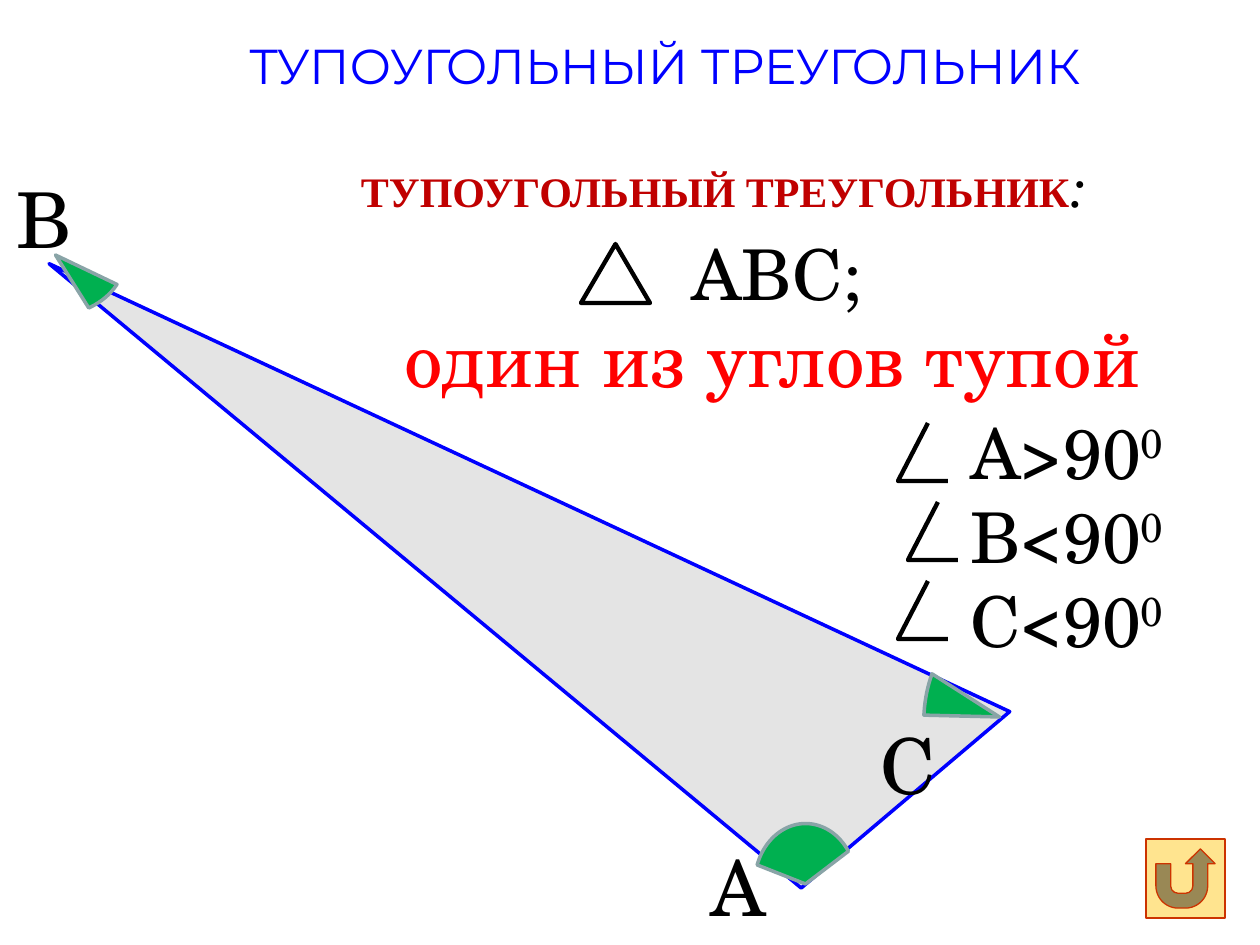
from lxml import etree
from pptx import Presentation
from pptx.dml.color import RGBColor
from pptx.enum import shapes
from pptx.oxml import ns
from pptx import util as u

PX = 914400 / 126
SERIF, TIMES, SANS = "TeX Gyre Schola", "Times New Roman", "Montserrat"
BLACK, BLUE, RED, GREEN = "000000", "0000FF", "FF0000", "00B050"


def px(n):
    return u.Emu(round(n * PX))


def color(value):
    return RGBColor.from_string(value)


class Board:
    """Draws on one slide with a shared style."""

    def __init__(self, slide):
        self.s = slide

    def paint(self, sp, fill, line, width, alpha=None):
        sp.shadow.inherit = False
        if fill:
            sp.fill.solid()
            sp.fill.fore_color.rgb = color(fill)
        else:
            sp.fill.background()
        if alpha:
            clr = sp.fill._xPr.find(".//" + ns.qn("a:srgbClr"))
            etree.SubElement(clr, ns.qn("a:alpha"), val=str(alpha * 1000))
        sp.line.color.rgb = color(line)
        sp.line.width = u.Pt(width)

    def shape(self, kind, box, fill, line, width, rot=0, adj=(), alpha=None):
        sp = self.s.shapes.add_shape(kind, *map(px, box))
        sp.rotation = rot
        for i, value in enumerate(adj):
            sp.adjustments[i] = value
        self.paint(sp, fill, line, width, alpha)

    def sector(self, box, rot, start, end):
        # Adjustments count in 100000ths, angles in 60000ths of a degree
        self.shape(shapes.MSO_SHAPE.PIE, box, GREEN, "89A4A7", 2, rot,
                   (start * 0.6, end * 0.6))

    def angle_sign(self, x, y):
        fb = self.s.shapes.build_freeform(x + 30, y, scale=PX)
        fb.add_line_segments([(x, y + 58), (x + 50, y + 58)], close=False)
        self.paint(fb.convert_to_shape(), None, BLACK, 2.5)

    def text(self, box, paragraphs, size, fill=BLACK, font=SERIF):
        """A run is its text and a dict of what differs from the box style."""
        tf = self.s.shapes.add_textbox(*map(px, box)).text_frame
        tf.word_wrap = True
        for i, runs in enumerate(paragraphs):
            p = tf.add_paragraph() if i else tf.paragraphs[0]
            for words, diff in runs:
                r = p.add_run()
                r.text = words
                f = r.font
                f.size = u.Pt(diff.get("size", size))
                f.name = diff.get("font", font)
                f.color.rgb = color(diff.get("fill", fill))
                f.bold = diff.get("bold", False)
                f.italic = diff.get("italic", False)
                if "base" in diff:
                    r._r.get_or_add_rPr().set("baseline", str(diff["base"] * 1000))


def main():
    prs = Presentation()
    prs.slide_width, prs.slide_height = px(1260), px(945)
    b = Board(prs.slides.add_slide(prs.slide_layouts[6]))
    triangle = shapes.MSO_SHAPE.ISOSCELES_TRIANGLE

    # Obtuse triangle and its vertices
    b.shape(triangle, (-53, 476, 1060, 248), "BFBFBF", BLUE, 2, 205, (0.108,), 42)
    for letter, x, y in (("А", 698, 833), ("В", 4, 165), ("С", 868, 711)):
        b.text((x, y, 137, 106), [[(letter, {})]], 44)

    # Angle sectors at A, B and C
    b.sector((745, 833, 121, 102), 90, 111.5, 232.6)
    b.sector((-15, 195, 141, 120), 180, 205.6, 237.9)
    b.sector((924, 612, 151, 210), 4, 177.4, 208.6)

    # Definition
    b.text((333, 145, 983, 81), [[
        (" ", {"italic": True}),
        ("ТУПОУГОЛЬНЫЙ ТРЕУГОЛЬНИК",
         {"size": 24, "font": TIMES, "fill": "C00000", "bold": True}),
        (":", {"italic": True})]], 32)
    b.shape(triangle, (581, 244, 69, 59), None, BLACK, 2.5)
    b.text((679, 224, 237, 97), [[("АВС;", {})]], 40)
    b.text((392, 304, 853, 106), [[("один из углов тупой", {})]], 44, RED)

    # Angle conditions
    b.text((958, 403, 417, 267),
           [[(rule, {}), ("0", {"base": 30})] for rule in ("А>90", "В<90", "С<90")], 40)
    for i, x in enumerate((898, 908, 898)):
        b.angle_sign(x, 423 + 79 * i)

    # Title and return button
    b.text((237, 29, 1023, 72), [[("ТУПОУГОЛЬНЫЙ ТРЕУГОЛЬНИК", {})]], 28, BLUE, SANS)
    b.shape(shapes.MSO_SHAPE.ACTION_BUTTON_RETURN, (1146, 839, 79, 79),
            "FFE48F", "CC3300", 0.75)

    prs.save("out.pptx")


if __name__ == "__main__":
    main()
